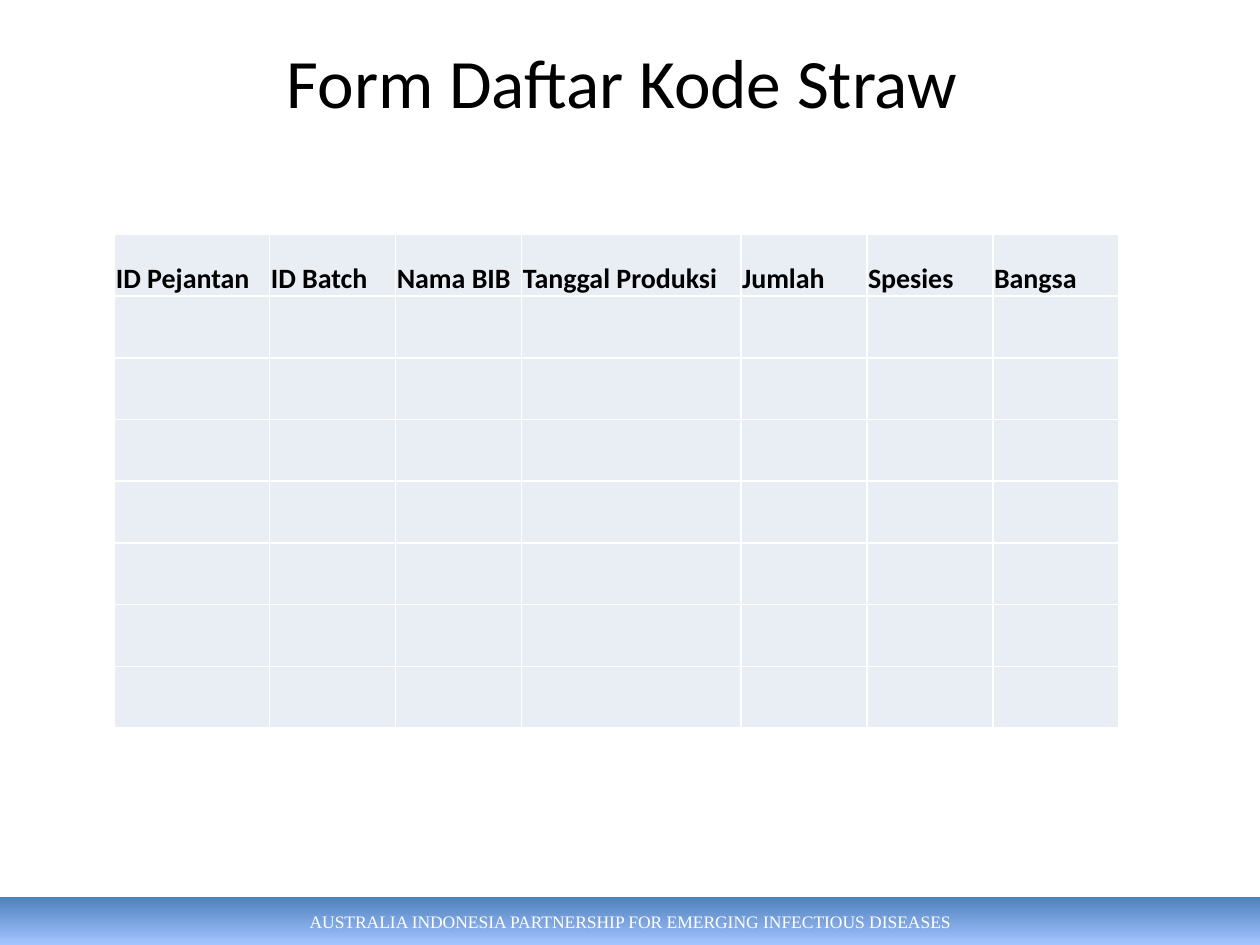
from dataclasses import dataclass

from lxml import etree
from pptx import Presentation
from pptx.dml.color import RGBColor
from pptx.enum.shapes import MSO_SHAPE
from pptx.enum.text import MSO_ANCHOR, PP_ALIGN
from pptx.oxml.ns import qn
from pptx.util import Inches, Pt

RECT = MSO_SHAPE.RECTANGLE
MIDDLE, BOTTOM = MSO_ANCHOR.MIDDLE, MSO_ANCHOR.BOTTOM
LEFT, CENTER = PP_ALIGN.LEFT, PP_ALIGN.CENTER
WIDE, HIGH = 10, 7.5
TITLE_ONLY = 5


@dataclass(frozen=True)
class Theme:
    ink: str = "000000"
    white: str = "FFFFFF"
    cell: str = "E9EDF4"
    band_top: str = "4F81BD"
    band_end: str = "A4C4FF"
    sans: str = "Calibri"
    serif: str = "Times New Roman"
    title: float = 39.6
    head: float = 16
    foot: float = 10
    rule: float = 1


@dataclass(frozen=True)
class Column:
    label: str
    width: float = 1


THEME = Theme()
COLUMNS = [
    Column("ID Pejantan", 1.23),
    Column("ID Batch"),
    Column("Nama BIB"),
    Column("Tanggal Produksi", 1.74),
    Column("Jumlah"),
    Column("Spesies"),
    Column("Bangsa"),
]
ROWS, ROW_HIGH = 8, 0.49


def add_run(frame, text: str, size: float, font: str, color: str,
            align=CENTER, bold: bool = False) -> None:
    para = frame.paragraphs[0]
    para.alignment = align
    run = para.add_run()
    run.text = text
    run.font.size = Pt(size)
    run.font.name = font
    run.font.bold = bold
    run.font.color.rgb = RGBColor.from_string(color)


def style_cell(cell) -> None:
    """Give a cell its thin borders, then its fill."""
    props = cell._tc.get_or_add_tcPr()
    for side in ("lnL", "lnR", "lnT", "lnB"):
        line = etree.SubElement(props, qn(f"a:{side}"), w=str(Pt(THEME.rule)))
        fill = etree.SubElement(line, qn("a:solidFill"))
        etree.SubElement(fill, qn("a:srgbClr"), val=THEME.white)
    cell.fill.solid()
    cell.fill.fore_color.rgb = RGBColor.from_string(THEME.cell)


def add_footer(slide, text: str) -> None:
    high = 0.38
    band = slide.shapes.add_shape(
        RECT, 0, Inches(HIGH - high), Inches(WIDE), Inches(high))
    band.shadow.inherit = False
    band.line.fill.background()
    band.fill.gradient()
    band.fill.gradient_angle = 270
    for stop, color in zip(band.fill.gradient_stops,
                           (THEME.band_top, THEME.band_end)):
        stop.color.rgb = RGBColor.from_string(color)
    band.text_frame.vertical_anchor = MIDDLE
    add_run(band.text_frame, text, THEME.foot, THEME.serif, THEME.white)


def set_title(slide, text: str) -> None:
    title = slide.shapes.title
    title.left, title.top = Inches(0.05 * WIDE), Inches(0.04 * HIGH)
    title.width, title.height = Inches(0.9 * WIDE), Inches(0.69)
    title.text_frame.vertical_anchor = MIDDLE
    add_run(title.text_frame, text, THEME.title, THEME.sans, THEME.ink)


def add_form(slide, left: float, top: float) -> None:
    wide = sum(col.width for col in COLUMNS)
    table = slide.shapes.add_table(
        ROWS, len(COLUMNS), Inches(left), Inches(top),
        Inches(wide), Inches(ROWS * ROW_HIGH)).table
    table.first_row = table.horz_banding = False
    for row in table.rows:
        row.height = Inches(ROW_HIGH)
    for cell in table.iter_cells():
        style_cell(cell)

    # Column widths and header labels
    for i, col in enumerate(COLUMNS):
        table.columns[i].width = Inches(col.width)
        cell = table.cell(0, i)
        cell.margin_left = cell.margin_right = cell.margin_top = Inches(0.01)
        cell.margin_bottom = 0
        cell.vertical_anchor = BOTTOM
        add_run(cell.text_frame, col.label, THEME.head, THEME.sans,
                THEME.ink, LEFT, True)


def main() -> None:
    deck = Presentation()
    deck.slide_width, deck.slide_height = Inches(WIDE), Inches(HIGH)
    slide = deck.slides.add_slide(deck.slide_layouts[TITLE_ONLY])
    add_footer(slide, "AUSTRALIA INDONESIA PARTNERSHIP "
                      "FOR EMERGING INFECTIOUS DISEASES")
    set_title(slide, "Form Daftar Kode Straw ")
    add_form(slide, 0.91, 1.86)
    deck.save("out.pptx")


if __name__ == "__main__":
    main()
